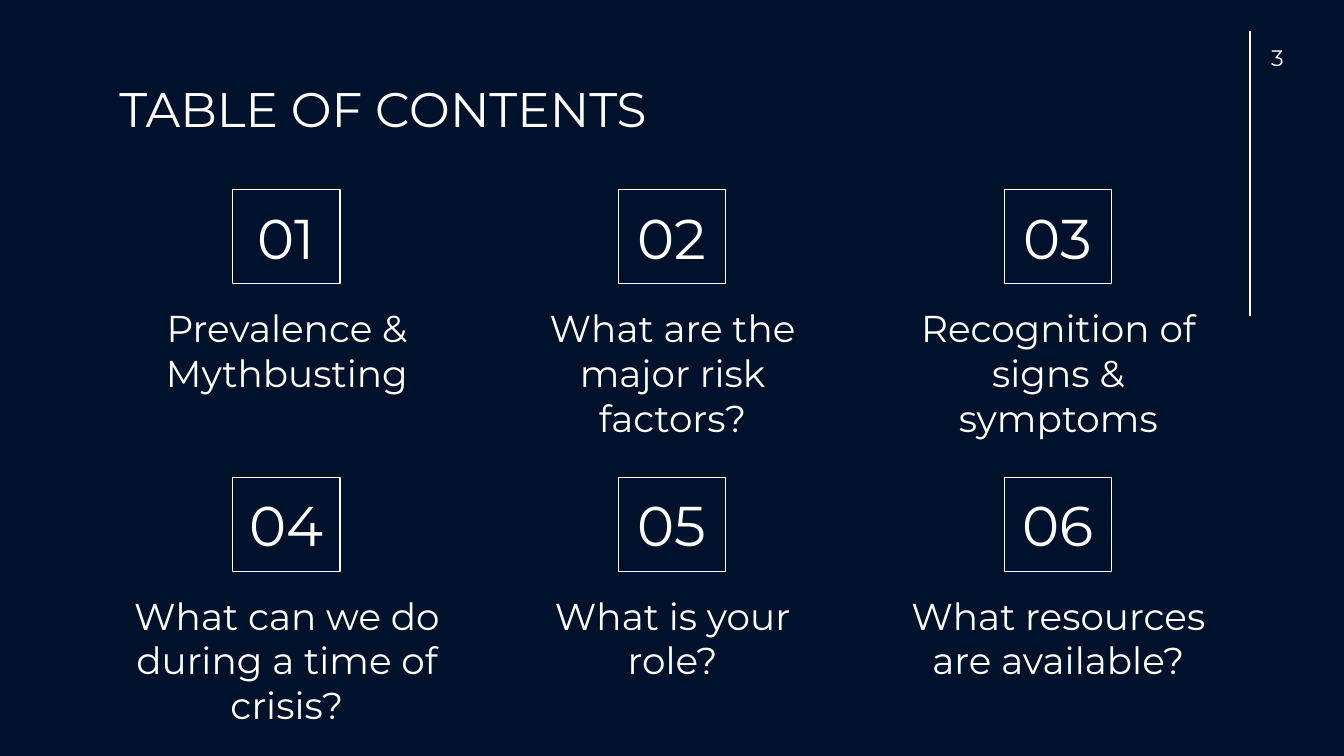
from typing import NamedTuple

from lxml.etree import SubElement
from pptx import Presentation
from pptx.dml.color import RGBColor
from pptx.enum.shapes import MSO_CONNECTOR as Connector, MSO_SHAPE as Shape
from pptx.enum.text import MSO_ANCHOR as Anchor, PP_ALIGN as Align
from pptx.oxml.ns import qn
from pptx.util import Inches, Pt

NAVY = RGBColor(0x00, 0x12, 0x2B)
WHITE = RGBColor(0xFF, 0xFF, 0xFF)
FONT = "Montserrat"
LINE_WIDTH = Pt(0.75)
COLUMNS = 3
TOPICS = [
    "Prevalence & Mythbusting",
    "What are the major risk factors?",
    "Recognition of signs & symptoms",
    "What can we do during a time of crisis?",
    "What is your role?",
    "What resources are available?",
]


class Box(NamedTuple):
    left: float
    top: float
    width: float
    height: float

    def percent(self, left, top, width, height):
        return Box(
            self.left + left * self.width / 100,
            self.top + top * self.height / 100,
            width * self.width / 100,
            height * self.height / 100,
        )

    def cell(self, column, row, columns, rows, gap_x, gap_y):
        width = (self.width - gap_x * (columns - 1)) / columns
        height = (self.height - gap_y * (rows - 1)) / rows
        return Box(
            self.left + column * (width + gap_x),
            self.top + row * (height + gap_y),
            width,
            height,
        )

    def lengths(self):
        return [Inches(length) for length in self]


PAGE = Box(0, 0, 10, 10 * 9 / 16)


def write(shape, text, size=20, align=Align.LEFT, anchor=Anchor.TOP):
    frame = shape.text_frame
    frame.word_wrap = True
    frame.vertical_anchor = anchor
    frame.margin_left = frame.margin_right = Inches(0.1)
    frame.margin_top = frame.margin_bottom = Inches(0.1)
    para = frame.paragraphs[0]
    para.alignment = align
    span = para.add_run()
    span.text = text
    span.font.size = Pt(size)
    span.font.name = FONT
    span.font.color.rgb = WHITE


def add_text(page, box, text, **style):
    write(page.shapes.add_textbox(*box.lengths()), text, **style)


def add_page_mark(page, box, number):
    left, top, _, height = box.lengths()
    rule = page.shapes.add_connector(Connector.STRAIGHT, left, top, left, top + height)
    rule.line.color.rgb = WHITE
    rule.line.width = LINE_WIDTH
    SubElement(rule._element.spPr, qn("a:effectLst"))
    add_text(page, box.percent(8.6, 0, 86, 16.5), number, size=12)


def add_topic(page, box, number, topic):
    frame = page.shapes.add_shape(
        Shape.RECTANGLE, *box.percent(35, 0, 29.7, 47.9).lengths()
    )
    frame.shadow.inherit = False
    frame.fill.background()
    frame.line.color.rgb = WHITE
    frame.line.width = LINE_WIDTH
    write(frame, f"{number:02}", size=30, align=Align.CENTER, anchor=Anchor.BOTTOM)
    add_text(page, box.percent(0, 52, 100, 48), topic, align=Align.CENTER)


def add_topics(page, box):
    rows = len(TOPICS) // COLUMNS
    for index, topic in enumerate(TOPICS):
        row, column = divmod(index, COLUMNS)
        cell = box.cell(column, row, COLUMNS, rows, gap_x=0.18, gap_y=0.68)
        add_topic(page, cell, index + 1, topic)


def add_contents(page, box):
    add_page_mark(page, box.percent(93, 4.1, 7, 37.7), "3")
    add_text(page, box.percent(7.9, 8.7, 84.3, 11.2), "TABLE OF CONTENTS", size=26)
    add_topics(page, box.percent(7.9, 25.1, 84.3, 64))


def main():
    deck = Presentation()
    deck.slide_width = Inches(PAGE.width)
    deck.slide_height = Inches(PAGE.height)
    page = deck.slides.add_slide(deck.slide_layouts[6])
    page.background.fill.solid()
    page.background.fill.fore_color.rgb = NAVY
    add_contents(page, PAGE)
    deck.save("out.pptx")


if __name__ == "__main__":
    main()
